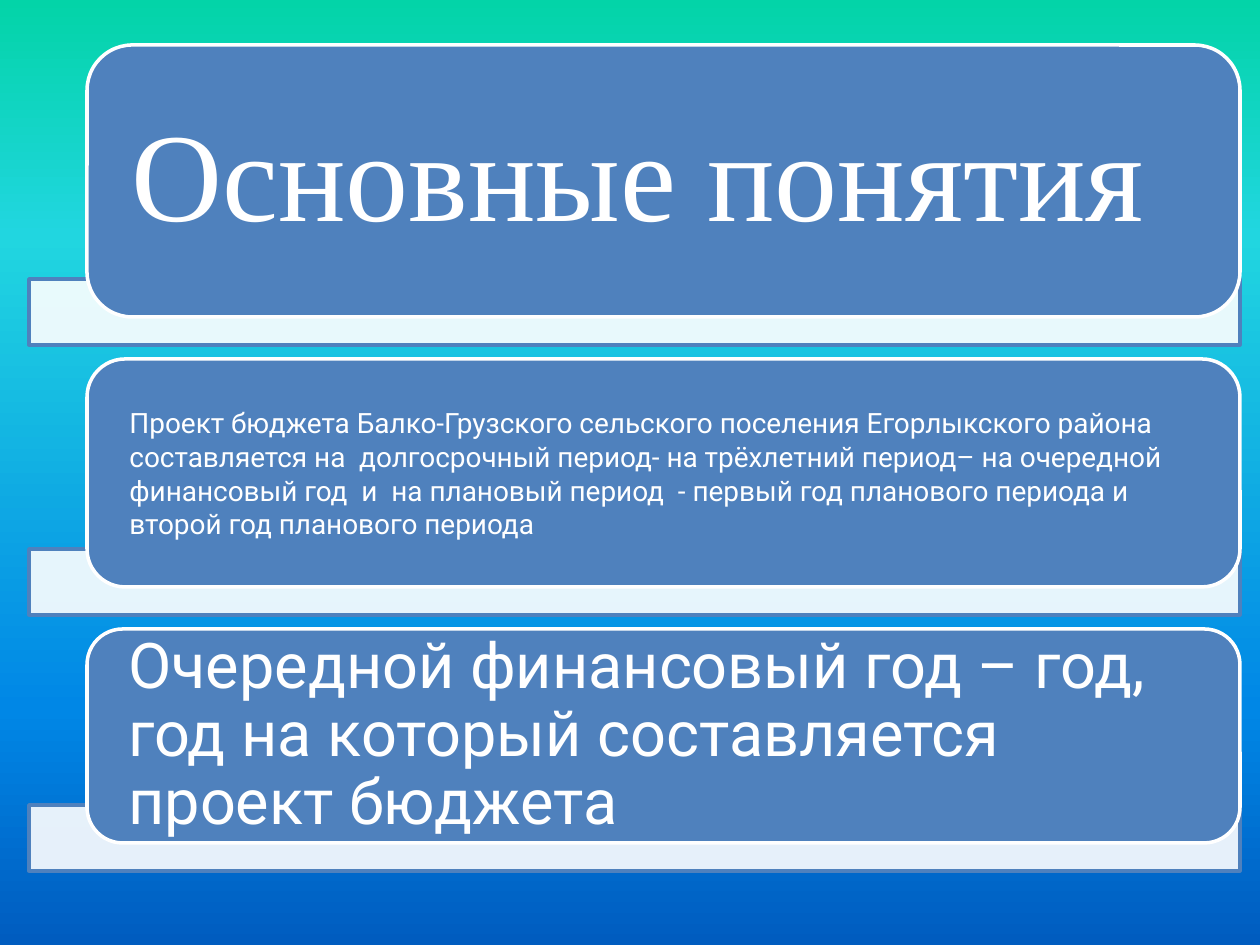
"""Build the slide of key budget terms: three cards, each resting on a bar."""
from copy import deepcopy

from pptx import Presentation
from pptx import util as u
from pptx.dml.color import RGBColor
from pptx.enum import shapes, text
from pptx.oxml import parse_xml
from pptx.oxml.ns import nsdecls, qn

PX = 914400 / 126
THEME = {
    "blue": RGBColor.from_string("4F81BD"),
    "white": RGBColor.from_string("FFFFFF"),
    "gradient": [(0, "03D4A8"), (25, "21D6E0"), (75, "0087E6"), (100, "005CBF")],
    "bar_opacity": 90,
    "line": u.Pt(2),
    "serif": "Times New Roman",
    "sans": "Roboto",
    "title": u.Pt(72),
    "body": u.Pt(16),
    "large": u.Pt(36),
}
CARDS = [
    {"height": 272, "font": "serif", "size": "title", "spacing": 0.9,
     "lines": ["Основные понятия"]},
    {"height": 228, "font": "sans", "size": "body", "spacing": 1.0,
     "lines": [
         "Проект бюджета Балко-Грузского сельского поселения Егорлыкского района",
         "составляется на  долгосрочный период- на трёхлетний период– на очередной "
         "финансовый год  и  на плановый период  - первый год планового периода и "
         "второй год планового периода"]},
    {"height": 214, "font": "sans", "size": "large", "spacing": 0.9,
     "lines": ["Очередной финансовый год – год, год на который составляется проект бюджета"]},
]
BAR_LEFT, BAR_WIDTH, BAR_HEIGHT, BAR_OVERLAP = 29, 1211, 66, 38
CARD_LEFT, CARD_WIDTH, CARD_GAP = 87, 1153, 42
CORNER_INSET = 0.0488


def emu(*lengths):
    return [u.Emu(round(length * PX)) for length in lengths]


def add_panel(preset, box, fill, line):
    shape = slide.shapes.add_shape(preset, *emu(*box))
    shape.shadow.inherit = False
    shape.fill.solid()
    shape.fill.fore_color.rgb = fill
    shape.line.color.rgb = line
    shape.line.width = THEME["line"]
    return shape


presentation = Presentation()
presentation.slide_width, presentation.slide_height = emu(1260, 945)
slide = presentation.slides.add_slide(presentation.slide_layouts[5])

background = slide.background.fill
background.gradient()
background.gradient_angle = 270
stop_list = slide.element.find(".//" + qn("a:gsLst"))
for stop in list(stop_list):
    stop_list.remove(stop)
for position, color in THEME["gradient"]:
    stop_list.append(parse_xml(
        f'<a:gs {nsdecls("a")} pos="{position * 1000}"><a:srgbClr val="{color}"/></a:gs>'))

alpha = parse_xml(f'<a:alpha {nsdecls("a")} val="{THEME["bar_opacity"] * 1000}"/>')
title = slide.shapes.title
top = 45
for card in CARDS:
    height = card["height"]
    bar = add_panel(shapes.MSO_SHAPE.RECTANGLE,
                    (BAR_LEFT, top + height - BAR_OVERLAP, BAR_WIDTH, BAR_HEIGHT),
                    THEME["white"], THEME["blue"])
    bar.element.spPr.find(qn("a:solidFill"))[0].append(deepcopy(alpha))
    add_panel(shapes.MSO_SHAPE.ROUNDED_RECTANGLE, (CARD_LEFT, top, CARD_WIDTH, height),
              THEME["blue"], THEME["white"])

    inset = round(height * CORNER_INSET)
    box = emu(CARD_LEFT + inset, top + inset, CARD_WIDTH - 2 * inset, height - 2 * inset)
    if card["size"] == "title":
        label = title
        label.element.getparent().append(label.element)
    else:
        label = slide.shapes.add_textbox(*box)
    for name, value in zip(("left", "top", "width", "height"), box):
        setattr(label, name, value)

    frame = label.text_frame
    frame.text = "\n".join(card["lines"])
    frame_format = {
        "word_wrap": True,
        "auto_size": text.MSO_AUTO_SIZE.NONE,
        "vertical_anchor": text.MSO_ANCHOR.MIDDLE,
        "margin_left": u.Inches(0.25),
        "margin_right": u.Inches(0.25),
        "margin_top": 0,
        "margin_bottom": 0,
    }
    for name, value in frame_format.items():
        setattr(frame, name, value)
    for paragraph in frame.paragraphs:
        paragraph.alignment = text.PP_ALIGN.LEFT
        paragraph.line_spacing = card["spacing"]
        font = paragraph.runs[0].font
        for name, value in {"name": THEME[card["font"]], "size": THEME[card["size"]]}.items():
            setattr(font, name, value)
        font.color.rgb = THEME["white"]
    top += height + CARD_GAP

presentation.save("out.pptx")
